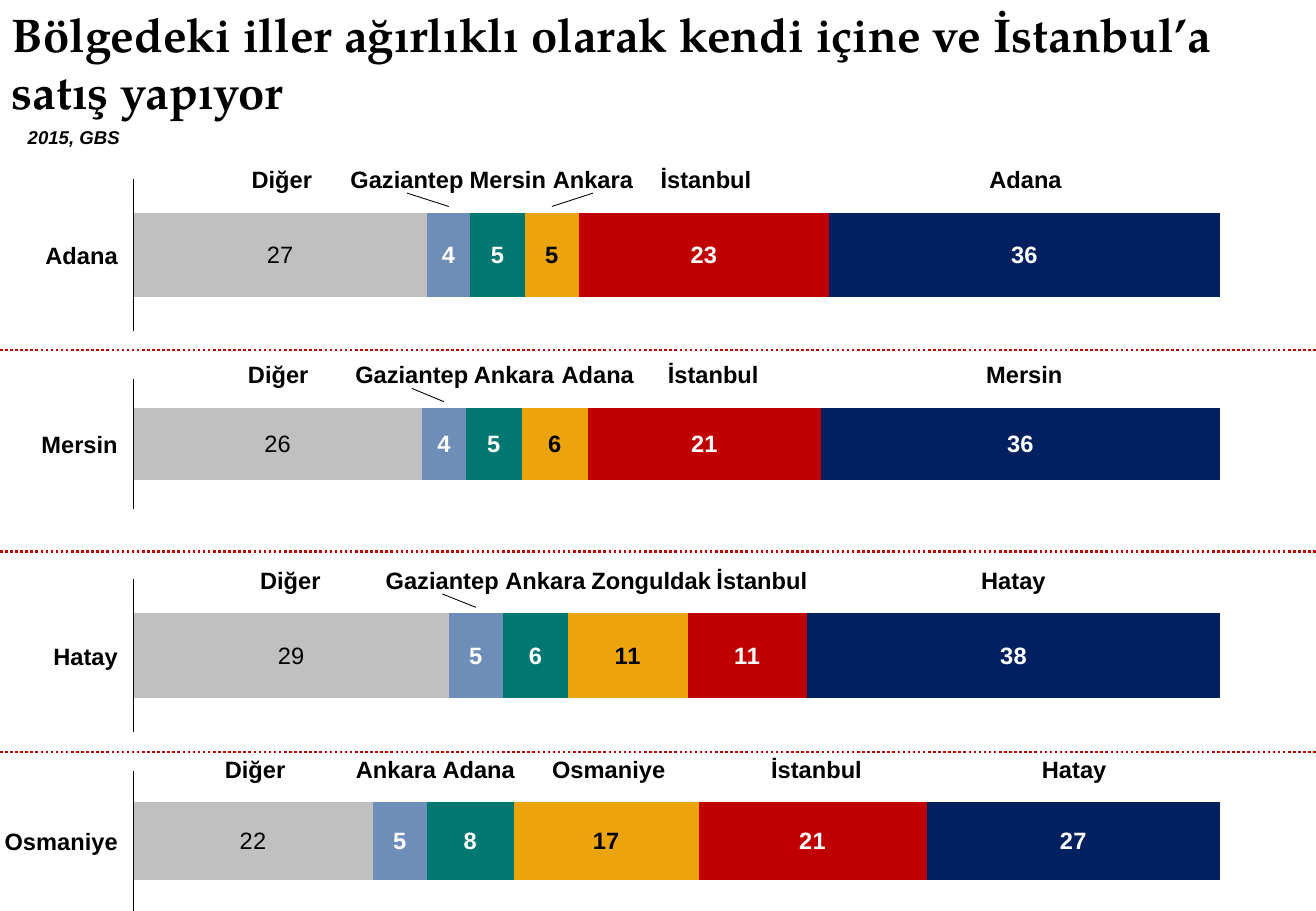
from collections import namedtuple

from lxml import etree
from pptx import Presentation
from pptx.chart.data import CategoryChartData
from pptx.dml.color import RGBColor
from pptx.enum.chart import XL_CHART_TYPE as CHART, XL_LABEL_POSITION as LABEL_POS
from pptx.enum.chart import XL_TICK_LABEL_POSITION as TICK_LABEL, XL_TICK_MARK as TICK
from pptx.enum.dml import MSO_LINE
from pptx.enum.shapes import MSO_CONNECTOR
from pptx.enum.text import MSO_ANCHOR as ANCHOR, PP_ALIGN as ALIGN
from pptx.oxml import parse_xml
from pptx.oxml.ns import qn
from pptx.util import Inches, Pt

BLACK, WHITE, RED = "000000", "FFFFFF", "C00000"
# fill, label colour, label bold
SERIES_STYLES = [("C0C0C0", BLACK, False), ("6F8DB9", WHITE, True),
                 ("007770", WHITE, True), ("ECA40D", BLACK, True),
                 (RED, WHITE, True), ("002060", WHITE, True)]

SLIDE_W, SLIDE_H = 10.83, 7.5
CHART_X, CHART_W, MARGIN = 1.01, 9.12, 0.09
PLOT_X, PLOT_W = CHART_X + MARGIN, CHART_W - 2 * MARGIN
GAP_WIDTH = 80
NAME_RIGHT, LABEL_H, LABEL_RISE, LEADER_H = 0.97, 0.23, 0.39, 0.11
LABEL_WIDTHS = {"Gaziantep": 0.97, "Adana": 0.63, "Mersin": 0.66, "İstanbul": 0.78,
                "Ankara": 0.7, "Diğer": 0.54, "Hatay": 0.57, "Zonguldak": 1.02,
                "Osmaniye": 0.97}

# label_x is the middle of the label; a leader joins it to its segment
Seg = namedtuple("Seg", "label value label_x leader", defaults=(False,))
Province = namedtuple("Province", "name top height segs")

PROVINCES = [
    Province("Adana", 1.38, 1.44, [
        Seg("Diğer", 27, 2.32), Seg("Gaziantep", 4, 3.35, True),
        Seg("Mersin", 5, 4.18), Seg("Ankara", 5, 4.88, True),
        Seg("İstanbul", 23, 5.81), Seg("Adana", 36, 8.44)]),
    Province("Mersin", 3.03, 1.25, [
        Seg("Diğer", 26, 2.29), Seg("Gaziantep", 4, 3.39, True),
        Seg("Ankara", 5, 4.23), Seg("Adana", 6, 4.92),
        Seg("İstanbul", 21, 5.87), Seg("Mersin", 36, 8.43)]),
    Province("Hatay", 4.68, 1.44, [
        Seg("Diğer", 29, 2.39), Seg("Gaziantep", 5, 3.64, True),
        Seg("Ankara", 6, 4.49), Seg("Zonguldak", 11, 5.36),
        Seg("İstanbul", 11, 6.27), Seg("Hatay", 38, 8.34)]),
    Province("Osmaniye", 6.26, 1.33, [
        Seg("Diğer", 22, 2.1), Seg("Ankara", 5, 3.26),
        Seg("Adana", 8, 3.94), Seg("Osmaniye", 17, 5.01),
        Seg("İstanbul", 21, 6.72), Seg("Hatay", 27, 8.84)]),
]
SEPARATORS = [2.88, 4.54, 6.19]


def rgb(color):
    return RGBColor.from_string(color)


def style_font(font, size, bold=False, color=BLACK, name="Arial"):
    font.name, font.size, font.bold = name, Pt(size), bold
    font.color.rgb = rgb(color)


def add_text(s, text, x, y, w, h, size, align=ALIGN.LEFT, anchor=ANCHOR.TOP,
             name="Arial", italic=False):
    sp = s.shapes.add_textbox(Inches(x), Inches(y), Inches(w), Inches(h))
    tf = sp.text_frame
    tf.word_wrap, tf.vertical_anchor = True, anchor
    p = tf.paragraphs[0]
    p.alignment = align
    r = p.add_run()
    r.text = text
    style_font(r.font, size, True, name=name)
    r.font.italic = italic
    return tf


def add_label(s, text, x, y, align, anchor):
    tf = add_text(s, text, x, y, LABEL_WIDTHS[text], LABEL_H, 14, align, anchor)
    tf.word_wrap = False
    tf.margin_left = tf.margin_right = tf.margin_top = tf.margin_bottom = 0


def add_line(s, x1, y1, x2, y2, color, width, dash=None):
    line = s.shapes.add_connector(MSO_CONNECTOR.STRAIGHT, Inches(x1), Inches(y1),
                                  Inches(x2), Inches(y2))
    line.line.color.rgb = rgb(color)
    line.line.width = Pt(width)
    if dash:
        line.line.dash_style = dash
    etree.SubElement(line._element.spPr, qn("a:effectLst"))


def set_plot_area(chart, height):
    """Fix the inner plot area at the same margin on all four sides."""
    x, y = MARGIN / CHART_W, MARGIN / height
    sizes = {"x": x, "y": y, "w": 1 - 2 * x, "h": 1 - 2 * y}
    layout = parse_xml(
        '<c:layout xmlns:c="http://schemas.openxmlformats.org/drawingml/2006/chart">'
        '<c:manualLayout><c:layoutTarget val="inner"/>'
        '<c:xMode val="edge"/><c:yMode val="edge"/>'
        + "".join(f'<c:{key} val="{size:.4f}"/>' for key, size in sizes.items())
        + "</c:manualLayout></c:layout>")
    plot_area = chart._chartSpace.chart.plotArea
    for old in plot_area.findall(qn("c:layout")):
        plot_area.remove(old)
    plot_area.insert(0, layout)


def add_bar(s, province, total):
    data = CategoryChartData(number_format="0")
    data.categories = ["1"]
    for i, seg in enumerate(province.segs, 1):
        data.add_series(f"Series {i}", [seg.value])
    chart = s.shapes.add_chart(CHART.BAR_STACKED, Inches(CHART_X), Inches(province.top),
                               Inches(CHART_W), Inches(province.height), data).chart
    chart.has_legend = chart.has_title = False
    style_font(chart.font, 10)
    set_plot_area(chart, province.height)

    cat = chart.category_axis
    cat.tick_label_position = TICK_LABEL.NONE
    cat.major_tick_mark = cat.minor_tick_mark = TICK.NONE
    cat.reverse_order = True
    cat.format.line.color.rgb = rgb(BLACK)
    cat.format.line.width = Pt(0.75)
    val = chart.value_axis
    val.minimum_scale, val.maximum_scale = 0, total
    val.has_major_gridlines = val.visible = False

    plot = chart.plots[0]
    plot.gap_width, plot.overlap, plot.vary_by_categories = GAP_WIDTH, 100, False
    for series, (fill, color, bold) in zip(plot.series, SERIES_STYLES):
        series.format.fill.solid()
        series.format.fill.fore_color.rgb = rgb(fill)
        labels = series.data_labels
        labels.show_value = True
        labels.number_format, labels.number_format_is_linked = "0", False
        labels.position = LABEL_POS.CENTER
        style_font(labels.font, 14, bold, color)


def add_province(s, province):
    total = sum(seg.value for seg in province.segs)
    add_bar(s, province, total)
    middle = province.top + province.height / 2
    bar_h = (province.height - 2 * MARGIN) / (1 + GAP_WIDTH / 100)
    label_y = middle - bar_h / 2 - LABEL_RISE
    leader_y = label_y + LABEL_H
    add_label(s, province.name, NAME_RIGHT - LABEL_WIDTHS[province.name],
              middle - LABEL_H / 2, ALIGN.RIGHT, ANCHOR.MIDDLE)
    start = 0
    for seg in province.segs:
        add_label(s, seg.label, seg.label_x - LABEL_WIDTHS[seg.label] / 2, label_y,
                  ALIGN.CENTER, ANCHOR.BOTTOM)
        if seg.leader:
            seg_x = PLOT_X + PLOT_W * (start + seg.value / 2) / total
            add_line(s, seg.label_x, leader_y, seg_x, leader_y + LEADER_H, BLACK, 0.5)
        start += seg.value


def main():
    prs = Presentation()
    prs.slide_width, prs.slide_height = Inches(SLIDE_W), Inches(SLIDE_H)
    s = prs.slides.add_slide(prs.slide_layouts[6])
    for province in PROVINCES:
        add_province(s, province)
    for y in SEPARATORS:
        add_line(s, 0, y, SLIDE_W, y, RED, 1.5, MSO_LINE.ROUND_DOT)
    add_text(s, "Bölgedeki iller ağırlıklı olarak kendi içine ve İstanbul’a satış yapıyor",
             0, 0.05, 10.11, 0.92, 28, anchor=ANCHOR.MIDDLE, name="TeX Gyre Pagella")
    add_text(s, "2015, GBS", 0.13, 0.99, 3.59, 0.29, 11, italic=True)
    prs.save("out.pptx")


if __name__ == "__main__":
    main()
